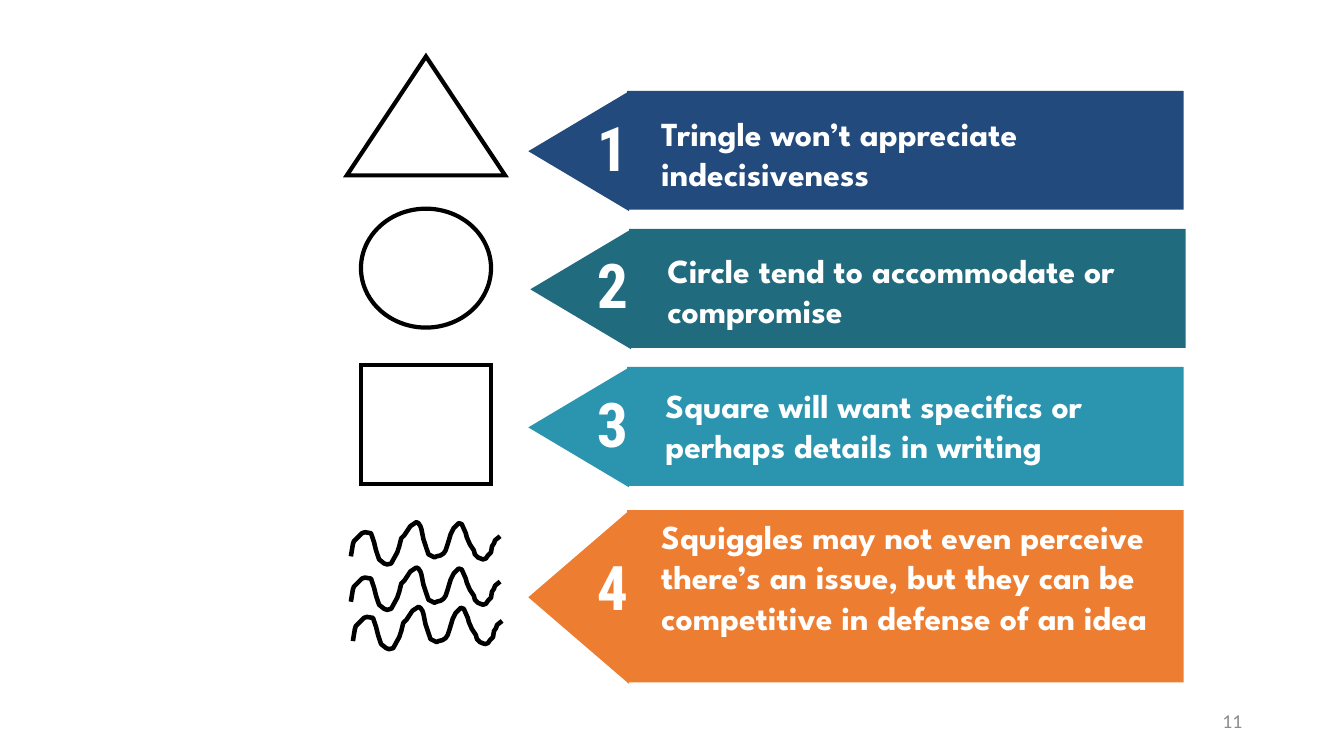
from lxml.etree import SubElement
from pptx import Presentation
from pptx.dml.color import RGBColor
from pptx.enum.shapes import MSO_SHAPE
from pptx.enum.text import MSO_ANCHOR, PP_ALIGN
from pptx.oxml.ns import qn
from pptx.util import Inches, Pt

NAVY = RGBColor(0x22, 0x4A, 0x7C)
TEAL = RGBColor(0x20, 0x6B, 0x7E)
AQUA = RGBColor(0x2B, 0x95, 0xB0)
ORANGE = RGBColor(0xED, 0x7D, 0x31)
WHITE = RGBColor(0xFF, 0xFF, 0xFF)
BLACK = RGBColor(0, 0, 0)
GRAY = RGBColor(0x8C, 0x8C, 0x8C)

# left, top, height, colour, number top, text box, text
BANNERS = [
    (6.22, 0.9, 1.18, NAVY, 1.04, (6.46, 1.07, 4.33, 0.91),
     "Tringle won’t appreciate indecisiveness"),
    (6.24, 2.27, 1.18, TEAL, 2.4, (6.52, 2.43, 5.22, 0.91),
     "Circle tend to accommodate or compromise"),
    (6.22, 3.64, 1.18, AQUA, 3.78, (6.5, 3.77, 4.88, 0.91),
     "Square will want specifics or perhaps details in writing"),
    (6.22, 5.06, 1.71, ORANGE, 5.4, (6.46, 5.07, 5.28, 1.72),
     "Squiggles may not even perceive there’s an issue, "
     "but they can be competitive in defense of an idea"),
]

SYMBOLS = [
    (MSO_SHAPE.ISOSCELES_TRIANGLE, (3.44, 0.56, 1.57, 1.18)),
    (MSO_SHAPE.OVAL, (3.58, 2.07, 1.29, 1.18)),
    (MSO_SHAPE.RECTANGLE, (3.58, 3.62, 1.29, 1.18)),
]

# One wave, in hundredths of an inch
WAVE = [
    (0, 34), (2, 22), (3, 19), (11, 11), (14, 10), (20, 11), (23, 20),
    (25, 28), (27, 34), (28, 37), (33, 41), (36, 42), (40, 41), (46, 30),
    (47, 27), (48, 24), (49, 20), (50, 16), (53, 13), (59, 4), (65, 0),
    (67, 1), (69, 4), (70, 7), (72, 17), (74, 23), (75, 26), (76, 29),
    (77, 32), (83, 35), (85, 34), (89, 33), (92, 31), (94, 28), (96, 22),
    (99, 12), (102, 6), (107, 1), (110, 2), (114, 11), (115, 15),
    (118, 22), (122, 28), (123, 32), (126, 35), (131, 37), (134, 36),
    (136, 33), (139, 30), (140, 24), (142, 21), (143, 18), (148, 14),
]
WAVE_SPOTS = [(3.48, 5.18), (3.48, 5.63), (3.5, 6.02)]


def add_filled(shapes, kind, box, color, turn):
    shape = shapes.add_shape(kind, *map(Inches, box))
    shape.rotation = turn
    shape.shadow.inherit = False
    shape.fill.solid()
    shape.fill.fore_color.rgb = color
    shape.line.fill.background()


def add_text(slide, box, text, font, size, color=WHITE, bold=True,
             align=PP_ALIGN.LEFT, anchor=MSO_ANCHOR.TOP):
    frame = slide.shapes.add_textbox(*map(Inches, box)).text_frame
    frame.word_wrap = True
    frame.vertical_anchor = anchor
    para = frame.paragraphs[0]
    para.alignment = align
    run = para.add_run()
    run.text = text
    run.font.name = font
    run.font.size = Pt(size)
    run.font.bold = bold
    run.font.color.rgb = color


def add_banner(slide, number, banner):
    """Draw a bar with a left-pointing tip, its number and its text."""
    left, top, height, color, num_top, box, text = banner
    group = slide.shapes.add_group_shape().shapes
    add_filled(group, MSO_SHAPE.RECTANGLE, (left, top, 5.52, height), color, 180)
    side = height + 0.01
    tip = (left - 0.48 - side / 2, top + height / 2 - 0.49, side, 1)
    add_filled(group, MSO_SHAPE.ISOSCELES_TRIANGLE, tip, color, 270)
    add_text(slide, box, text, "League Spartan", 24)
    add_text(slide, (5.79, num_top, 0.57, 0.84), str(number),
             "Roboto Condensed", 44, align=PP_ALIGN.CENTER)


def set_outline(shape, width, join):
    shape.shadow.inherit = False
    shape.fill.background()
    shape.line.color.rgb = BLACK
    shape.line.width = Pt(width)
    line = shape.line._get_or_add_ln()
    SubElement(line, qn(f"a:{join}"))


def add_wave(shapes, left, top):
    start, *rest = WAVE
    pen = shapes.build_freeform(*start, scale=Inches(0.01))
    pen.add_line_segments(rest, close=False)
    wave = pen.convert_to_shape(Inches(left), Inches(top))
    set_outline(wave, 3.25, "round")


def main():
    deck = Presentation()
    deck.slide_width = Inches(13.33)
    deck.slide_height = Inches(7.5)
    slide = deck.slides.add_slide(deck.slide_layouts[6])

    for number, banner in enumerate(BANNERS, 1):
        add_banner(slide, number, banner)
    for kind, box in SYMBOLS:
        symbol = slide.shapes.add_shape(kind, *map(Inches, box))
        set_outline(symbol, 3, "miter")
    waves = slide.shapes.add_group_shape().shapes
    for left, top in WAVE_SPOTS:
        add_wave(waves, left, top)
    add_text(slide, (9.42, 6.95, 3, 0.4), "11", "Calibri", 14, GRAY, False,
             PP_ALIGN.RIGHT, MSO_ANCHOR.MIDDLE)
    deck.save("out.pptx")


if __name__ == "__main__":
    main()
